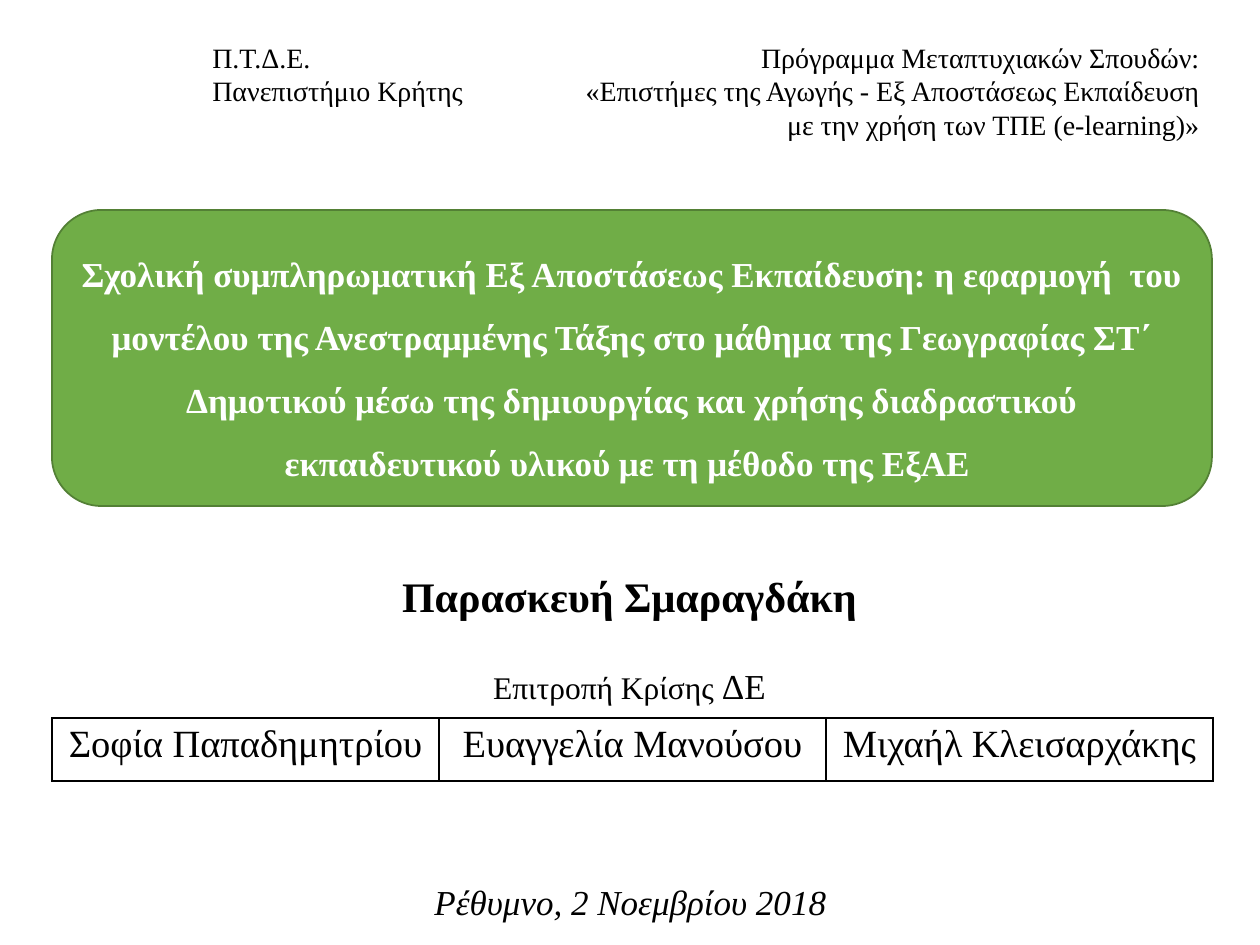
"""Build the title slide of a thesis presentation."""
from lxml import etree
from pptx import Presentation
from pptx.dml.color import RGBColor
from pptx.enum.shapes import MSO_SHAPE
from pptx.enum.text import MSO_ANCHOR, PP_ALIGN
from pptx.oxml.ns import qn
from pptx.util import Emu, Pt

LEFT, MID, RIGHT = PP_ALIGN.LEFT, PP_ALIGN.CENTER, PP_ALIGN.RIGHT
TOP, CENTER = MSO_ANCHOR.TOP, MSO_ANCHOR.MIDDLE
ROUND = MSO_SHAPE.ROUNDED_RECTANGLE
BLACK, WHITE, GREEN, EDGE = "000000", "FFFFFF", "70AD47", "538035"
SCALE = 914400 / 126


def px(*sizes):
    return [Emu(round(size * SCALE)) for size in sizes]


def write(frame, lines, align, color=BLACK, **style):
    for i, line in enumerate(lines):
        para = frame.paragraphs[0] if i == 0 else frame.add_paragraph()
        para.alignment = align
        for text, size in line:
            run = para.add_run()
            run.text = text
            run.font.name = "Times New Roman"
            run.font.size = Pt(size)
            run.font.color.rgb = RGBColor.from_string(color)
            for key, value in style.items():
                setattr(run.font, key, value)


prs = Presentation()
prs.slide_width, prs.slide_height = px(1260, 945)
slide = prs.slides.add_slide(prs.slide_layouts[6])
shapes = slide.shapes

program = [
    [("Πρόγραμμα Μεταπτυχιακών Σπουδών:", 16)],
    [("«Επιστήμες της Αγωγής - Εξ Αποστάσεως Εκπαίδευση", 16)],
    [("με την χρήση των ΤΠΕ (e-learning)»", 16)],
]
school = [[("Π.Τ.Δ.Ε.", 16)], [("Πανεπιστήμιο Κρήτης", 16)]]
author = [[("Παρασκευή Σμαραγδάκη", 24)]]
board = [[("Επιτροπή Κρίσης ", 18), ("ΔΕ", 20)]]
date = [[("Ρέθυμνο, 2 Νοεμβρίου 2018", 20)]]
boxes = [
    ((554, 34, 658, 115), program, RIGHT, TOP, True, {}),
    ((200, 34, 312, 81), school, LEFT, TOP, True, {}),
    ((387, 564, 485, 63), author, MID, TOP, False, {"bold": True}),
    ((276, 658, 707, 55), board, MID, TOP, True, {}),
    ((134, 874, 993, 55), date, MID, CENTER, True, {"italic": True}),
]
for place, lines, align, anchor, wrap, style in boxes:
    frame = shapes.add_textbox(*px(*place)).text_frame
    frame.word_wrap = wrap
    frame.vertical_anchor = anchor
    write(frame, lines, align, **style)

topic = (
    "Σχολική συμπληρωματική Εξ Αποστάσεως Εκπαίδευση: η εφαρμογή  του "
    "μοντέλου της Ανεστραμμένης Τάξης στο μάθημα της Γεωγραφίας ΣΤ΄ "
    "Δημοτικού μέσω της δημιουργίας και χρήσης διαδραστικού "
    "εκπαιδευτικού υλικού με τη μέθοδο της ΕξΑΕ "
)
panel = shapes.add_shape(ROUND, *px(52, 210, 1160, 296))
panel.shadow.inherit = False
panel.fill.solid()
panel.fill.fore_color.rgb = RGBColor.from_string(GREEN)
panel.line.color.rgb = RGBColor.from_string(EDGE)
panel.line.width = Pt(1)
frame = panel.text_frame
frame.word_wrap = True
frame.vertical_anchor = CENTER
write(frame, [[(topic, 20)]], MID, WHITE, bold=True)
frame.paragraphs[0].line_spacing = 1.5

names = ["Σοφία Παπαδημητρίου", "Ευαγγελία Μανούσου", "Μιχαήλ Κλεισαρχάκης"]
table = shapes.add_table(1, len(names), *px(52, 718, 1161, 63)).table
table.first_row = table.horz_banding = False
insets = {"margin_left": 9, "margin_right": 9, "margin_top": 5, "margin_bottom": 5}
for cell, name in zip(table.rows[0].cells, names):
    for key, value in insets.items():
        setattr(cell, key, px(value)[0])
    write(cell.text_frame, [[(name, 22)]], MID, bold=False)
    props = cell._tc.get_or_add_tcPr()
    for side in ("a:lnL", "a:lnR", "a:lnT", "a:lnB"):
        line = etree.SubElement(props, qn(side), w=str(Pt(1)))
        fill = etree.SubElement(line, qn("a:solidFill"))
        etree.SubElement(fill, qn("a:srgbClr"), val=BLACK)
    cell.fill.solid()
    cell.fill.fore_color.rgb = RGBColor.from_string(WHITE)

prs.save("out.pptx")
